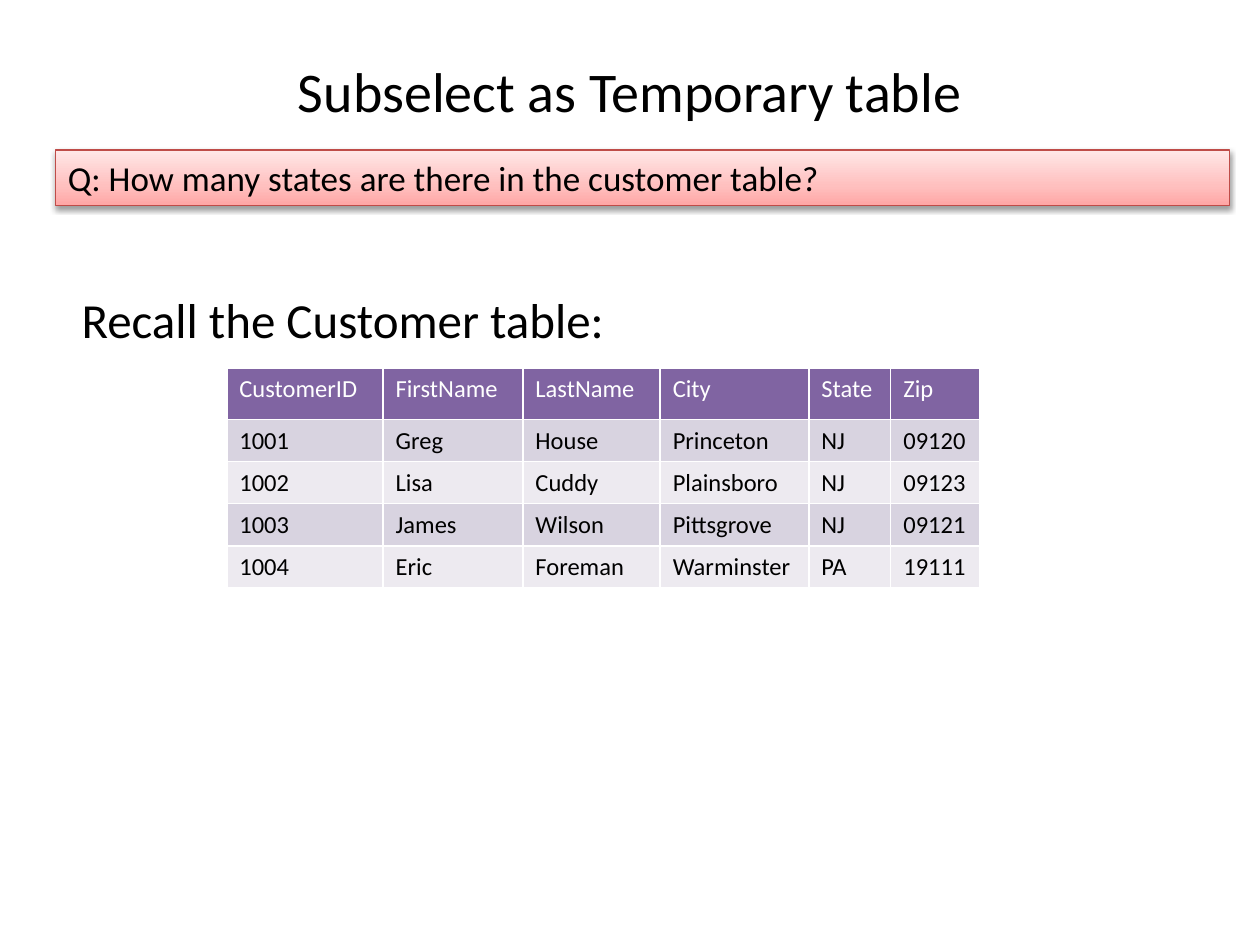
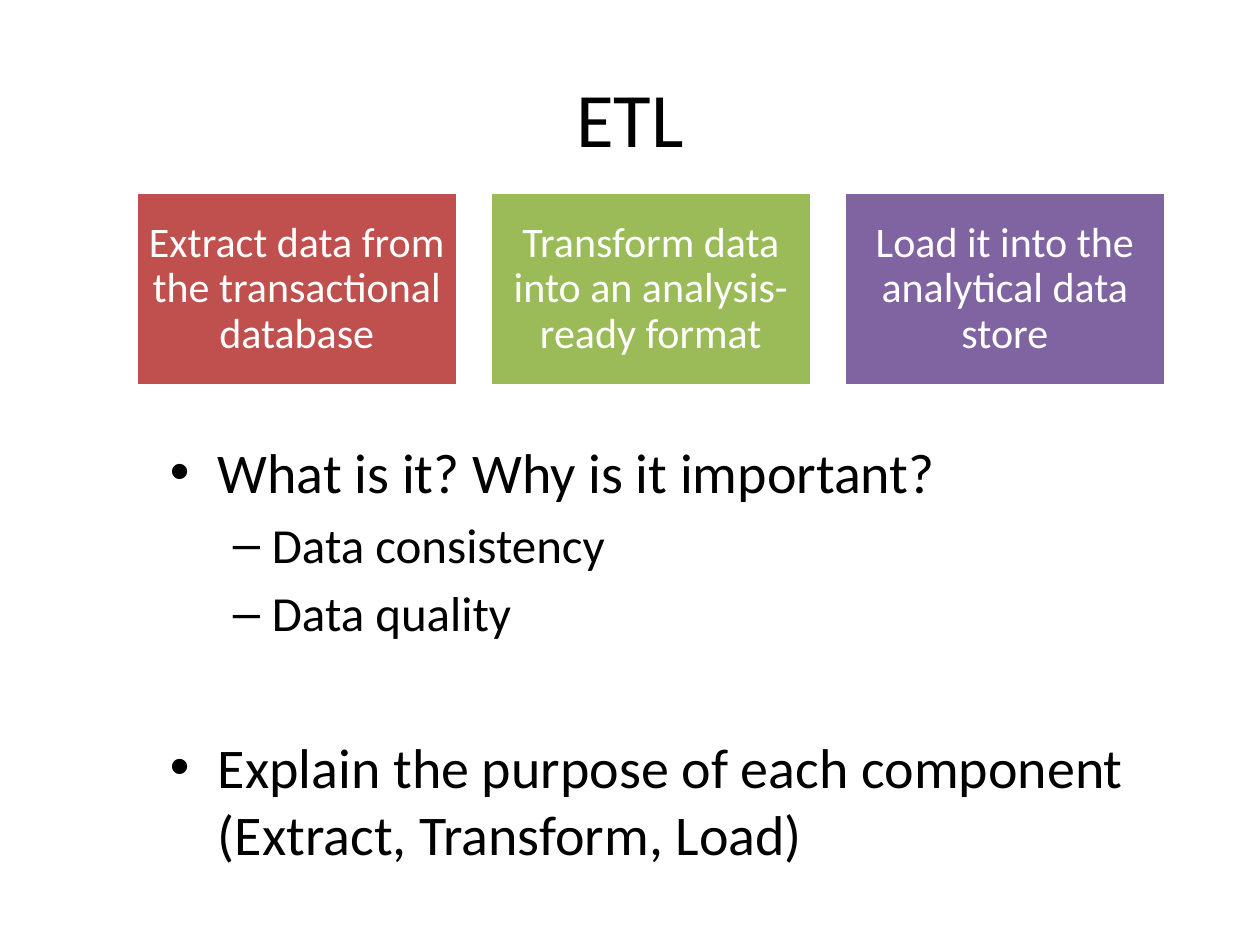
from lxml import etree
from pptx import Presentation
from pptx.dml.color import RGBColor
from pptx.enum.shapes import MSO_SHAPE
from pptx.enum.text import MSO_ANCHOR, PP_ALIGN
from pptx.oxml import parse_xml
from pptx.oxml.ns import nsdecls, qn
from pptx.util import Inches, Pt

RECTANGLE = MSO_SHAPE.RECTANGLE
MIDDLE = MSO_ANCHOR.MIDDLE
TOP = MSO_ANCHOR.TOP
LEFT = PP_ALIGN.LEFT
CENTER = PP_ALIGN.CENTER

FONT = "Calibri"
BLACK, WHITE = "000000", "FFFFFF"
RED, GREEN, PURPLE = "C0504D", "9BBB59", "8064A2"
BANDS = ("D8D3E0", "EDEAF0")
QUESTION_LINE = "BF4C48"
QUESTION_STOPS = ((0, "FFA6A5"), (35, "FFC0BF"), (100, "FFE7E7"))

CUSTOMER_COLUMNS = (1.24, 1.11, 1.09, 1.18, 0.65, 0.71)
CUSTOMERS = (
    ("CustomerID", "FirstName", "LastName", "City", "State", "Zip"),
    ("1001", "Greg", "House", "Princeton", "NJ", "09120"),
    ("1002", "Lisa", "Cuddy", "Plainsboro", "NJ", "09123"),
    ("1003", "James", "Wilson", "Pittsgrove", "NJ", "09121"),
    ("1004", "Eric", "Foreman", "Warminster", "PA", "19111"),
)
ETL_STEPS = (
    ("Extract data from the transactional database", RED),
    ("Transform data into an analysis-ready format", GREEN),
    ("Load it into the analytical data store", PURPLE),
)
BULLET_LEVELS = (("•", 0.38, 0.38, 32), ("–", 0.81, 0.31, 28))
ETL_POINTS = (
    (0, "What is it? Why is it important?", 6.4),
    (1, "Data consistency", 5.6),
    (1, "Data quality", 5.6),
    (0, "Explain the purpose of each component (Extract, Transform, Load)", 52),
)


def rgb(value):
    """Turn a hex string into a colour."""
    return RGBColor.from_string(value)


def place(box):
    """Convert a left, top, width, height box to lengths."""
    return [Inches(length) for length in box]


def style_para(para, size, color=BLACK, align=LEFT):
    """Format a paragraph and its runs."""
    para.alignment = align
    for span in para.runs:
        span.font.name = FONT
        span.font.size = Pt(size)
        span.font.bold = False
        span.font.color.rgb = rgb(color)


def write(frame, text, size, color=BLACK, align=LEFT, anchor=TOP):
    """Fill a text frame with one formatted paragraph."""
    frame.text = text
    frame.word_wrap = True
    frame.vertical_anchor = anchor
    style_para(frame.paragraphs[0], size, color, align)


def add_text(page, box, text, size, **style):
    """Add a text box."""
    write(page.shapes.add_textbox(*place(box)).text_frame, text, size, **style)


def add_title(page, text, size, height):
    """Add the centred slide title."""
    add_text(page, (0.5, 0.3, 9, height), text, size, align=CENTER, anchor=MIDDLE)


def add_rectangle(page, box, line_color, line_width):
    """Add a rectangle with an outline and no inherited shadow."""
    shape = page.shapes.add_shape(RECTANGLE, *place(box))
    shape.shadow.inherit = False
    shape.line.color.rgb = rgb(line_color)
    shape.line.width = Pt(line_width)
    return shape


def add_question(page, box, text):
    """Add the shaded question band with its soft shadow."""
    band = add_rectangle(page, box, QUESTION_LINE, 0.75)
    stops = "".join(
        f'<a:gs pos="{position * 1000}"><a:srgbClr val="{color}"/></a:gs>'
        for position, color in QUESTION_STOPS
    )
    gradient = parse_xml(
        f'<a:gradFill {nsdecls("a")} rotWithShape="1"><a:gsLst>{stops}</a:gsLst>'
        '<a:lin ang="16200000" scaled="0"/></a:gradFill>'
    )
    properties = band.element.spPr
    properties.find(qn("a:prstGeom")).addnext(gradient)
    shadow = parse_xml(
        f'<a:outerShdw {nsdecls("a")} blurRad="{Pt(3.1)}" dist="{Pt(1.6)}" '
        f'dir="5400000" rotWithShape="0"><a:srgbClr val="{BLACK}">'
        '<a:alpha val="38000"/></a:srgbClr></a:outerShdw>'
    )
    properties.find(qn("a:effectLst")).append(shadow)
    write(band.text_frame, text, 20, anchor=MIDDLE)


def add_borders(cell, color, width):
    """Draw a line on every side of a table cell."""
    properties = cell._tc.get_or_add_tcPr()
    for side in ("lnL", "lnR", "lnT", "lnB"):
        line = etree.SubElement(properties, qn(f"a:{side}"), w=str(Pt(width)))
        fill = etree.SubElement(line, qn("a:solidFill"))
        etree.SubElement(fill, qn("a:srgbClr"), val=color)


def add_customer_table(page, box):
    """Add the customer table with a purple header and banded rows."""
    shape = page.shapes.add_table(len(CUSTOMERS), len(CUSTOMER_COLUMNS), *place(box))
    table = shape.table
    for column, width in zip(table.columns, CUSTOMER_COLUMNS):
        column.width = Inches(width)
    for index, values in enumerate(CUSTOMERS):
        header = index == 0
        table.rows[index].height = Inches(0.41 if header else 0.33)
        for cell, value in zip(table.rows[index].cells, values):
            add_borders(cell, WHITE, 1)
            cell.fill.solid()
            cell.fill.fore_color.rgb = rgb(PURPLE if header else BANDS[(index - 1) % 2])
            cell.text = value
            style_para(cell.text_frame.paragraphs[0], 14, WHITE if header else BLACK)


def add_steps(page, box, gap):
    """Add equal coloured blocks in a row, one for each ETL step."""
    left, top, width, height = box
    block_width = (width - gap * (len(ETL_STEPS) - 1)) / len(ETL_STEPS)
    for index, (text, color) in enumerate(ETL_STEPS):
        block_left = left + index * (block_width + gap)
        block = add_rectangle(page, (block_left, top, block_width, height), WHITE, 2)
        block.fill.solid()
        block.fill.fore_color.rgb = rgb(color)
        frame = block.text_frame
        frame.margin_left = frame.margin_right = Inches(0.09)
        write(frame, text, 24, WHITE, CENTER, MIDDLE)
        frame.paragraphs[0].line_spacing = 0.9
        frame.paragraphs[0].space_after = Pt(8.4)


def add_bullets(page, box, points):
    """Add a two-level bullet list."""
    frame = page.shapes.add_textbox(*place(box)).text_frame
    frame.word_wrap = True
    for index, (level, text, before) in enumerate(points):
        para = frame.add_paragraph() if index else frame.paragraphs[0]
        mark, margin, hanging, size = BULLET_LEVELS[level]
        para.text = text
        para.level = level
        para.space_before = Pt(before)
        style_para(para, size)
        properties = para._p.get_or_add_pPr()
        properties.set("marL", str(Inches(margin)))
        properties.set("indent", str(-Inches(hanging)))
        etree.SubElement(properties, qn("a:buFont"), typeface="Arial")
        etree.SubElement(properties, qn("a:buChar"), char=mark)


def build_subselect(page):
    """Build the slide on the subselect question."""
    add_title(page, "Subselect as Temporary table", 32, 0.83)
    add_question(page, (0.44, 1.19, 9.32, 0.44),
                 "Q: How many states are there in the customer table?")
    add_customer_table(page, (1.8, 2.92, 5.98, 1.73))
    add_text(page, (0.55, 2.25, 8.99, 0.58), "Recall the Customer table:", 28)


def build_etl(page):
    """Build the slide on extract, transform and load."""
    add_title(page, "ETL", 44, 1.25)
    add_bullets(page, (1.25, 3.42, 8.25, 3.78), ETL_POINTS)
    add_steps(page, (1.08, 1.53, 8.17, 1.53), 0.26)


def main():
    """Build and save the deck."""
    deck = Presentation()
    deck.slide_width = Inches(10)
    deck.slide_height = Inches(7.5)
    for build in (build_subselect, build_etl):
        build(deck.slides.add_slide(deck.slide_layouts[6]))
    deck.save("out.pptx")


if __name__ == "__main__":
    main()
